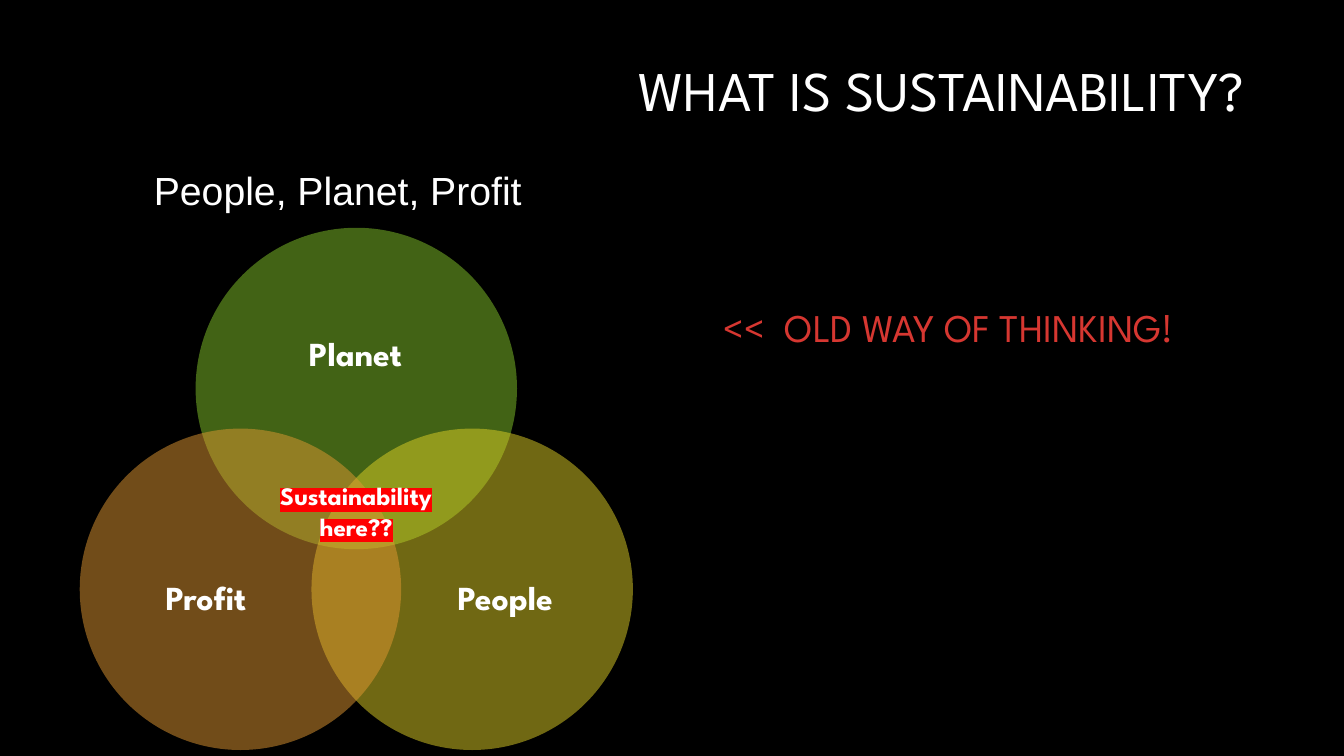
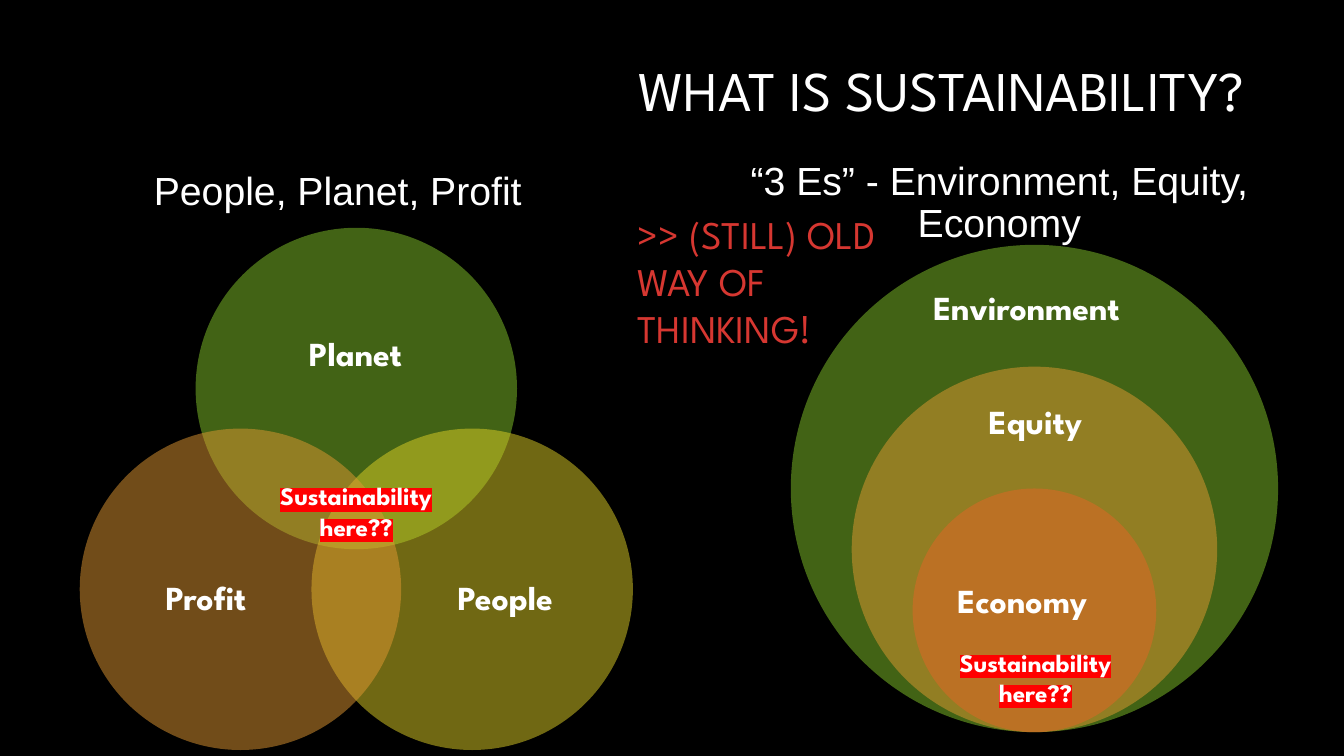
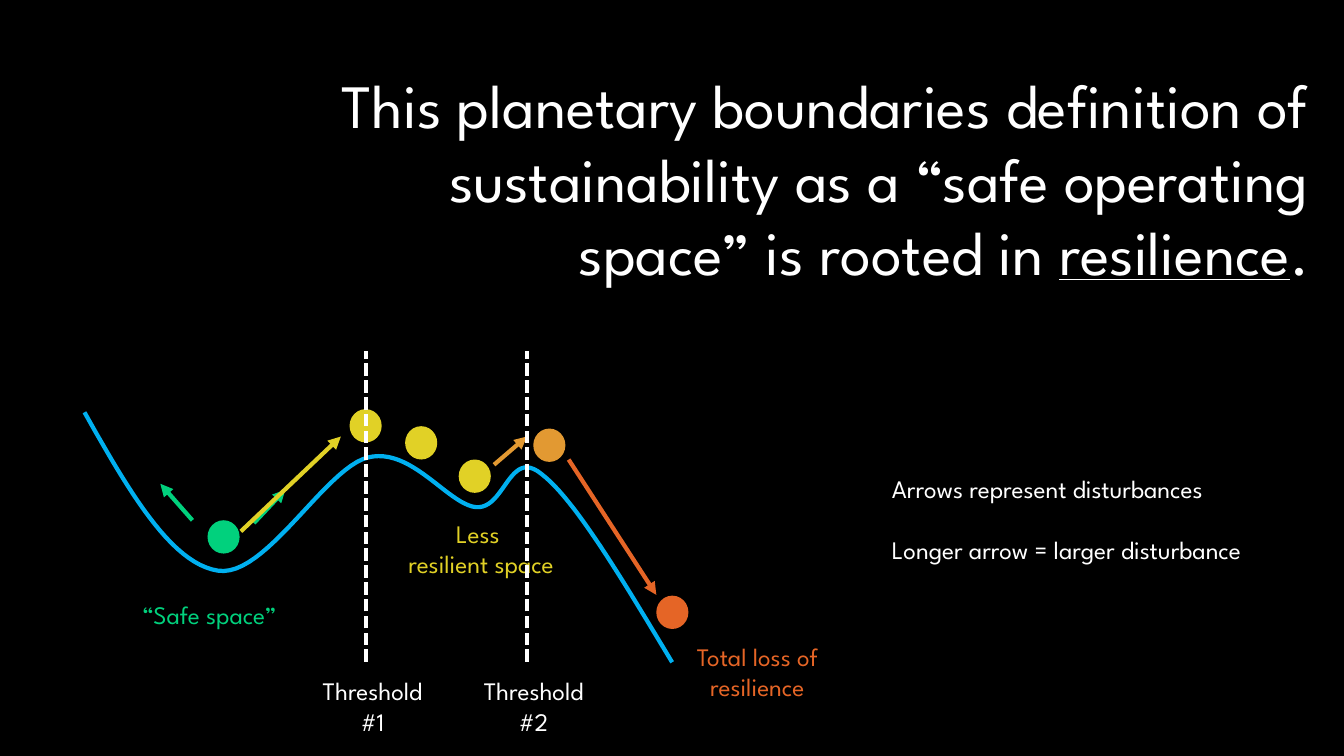
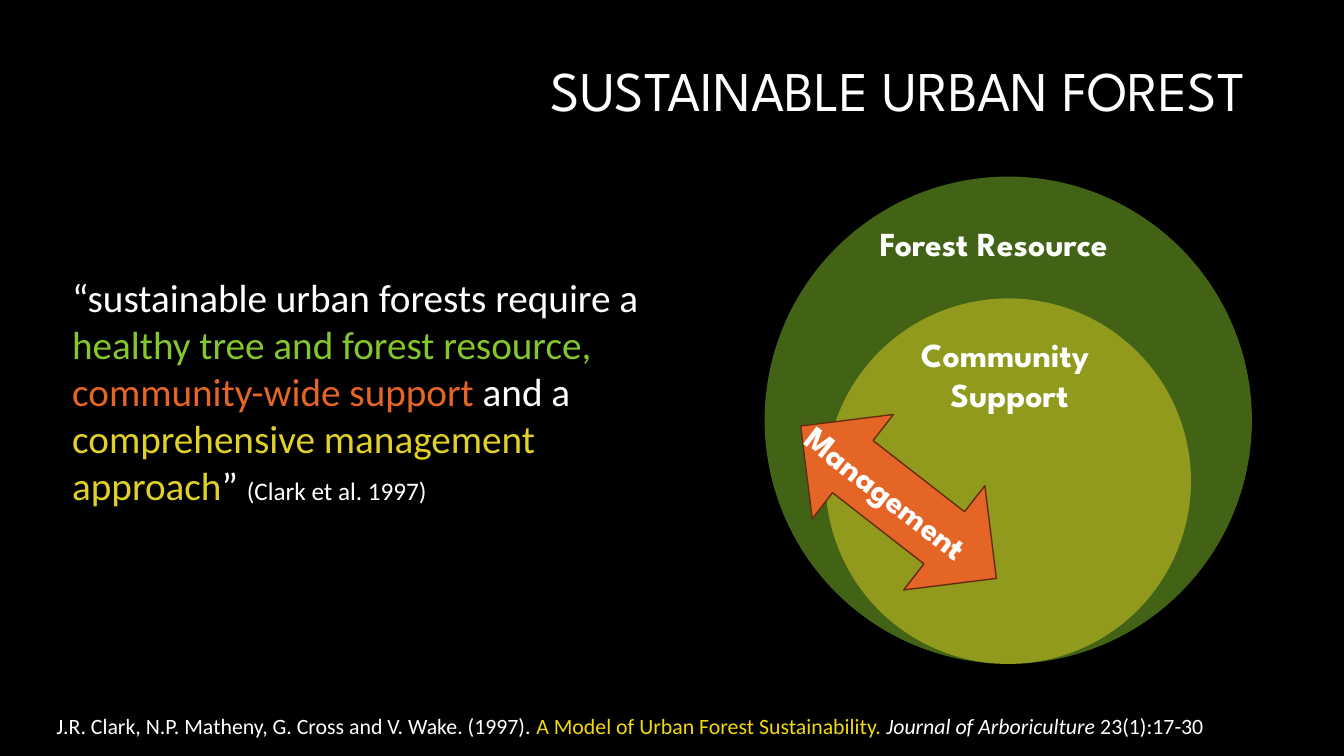
"""Build four dark slides on sustainability, resilience and urban forests."""
from dataclasses import dataclass

from lxml import etree
from pptx import Presentation
from pptx.dml.color import RGBColor
from pptx.enum.dml import MSO_LINE
from pptx.enum.shapes import MSO_CONNECTOR, MSO_SHAPE
from pptx.enum.text import MSO_ANCHOR, MSO_AUTO_SIZE, PP_ALIGN
from pptx.oxml.ns import qn
from pptx.util import Cm, Pt

LEFT, MID, RIGHT = PP_ALIGN.LEFT, PP_ALIGN.CENTER, PP_ALIGN.RIGHT
OVAL, ARROW = MSO_SHAPE.OVAL, MSO_SHAPE.UP_DOWN_ARROW
GROW, FIXED = MSO_AUTO_SIZE.SHAPE_TO_FIT_TEXT, MSO_AUTO_SIZE.NONE
CENTRE = MSO_ANCHOR.MIDDLE
LINE, DASH = MSO_CONNECTOR.STRAIGHT, MSO_LINE.SQUARE_DOT


@dataclass(frozen=True)
class Theme:
    """Colours, fonts and type sizes of the deck."""
    black: str = "000000"
    white: str = "FFFFFF"
    green: str = "84C72A"
    yellow: str = "E1D126"
    amber: str = "E29932"
    orange: str = "E56526"
    rust: str = "642C11"
    red: str = "D63731"
    alert: str = "FF0000"
    mint: str = "01D17D"
    blue: str = "00B0F0"
    gold: str = "F2D908"
    font: str = "League Spartan"
    plain: str = "Arial"
    serif: str = "Calibri"
    huge: int = 44
    title: int = 40
    large: int = 28
    label: int = 24
    small: int = 18
    cite: float = 15.6


T = Theme()
rgb = RGBColor.from_string


def write(box, words, size, ink=T.white, font=T.font, bold=False,
          align=LEFT, wrap=True, centre=False, space=1.0):
    """Fill a box with text, or a list of runs, and return its runs."""
    frame = box.text_frame
    first, *rest = [words] if isinstance(words, str) else words
    frame.text = first
    for part in rest:
        frame.paragraphs[0].add_run().text = part
    frame.word_wrap = wrap
    frame.auto_size = FIXED if centre or box.is_placeholder else GROW
    if centre:
        frame.vertical_anchor = CENTRE
        frame.margin_left = frame.margin_right = 0
        frame.margin_top = frame.margin_bottom = 0
    runs = []
    for para in frame.paragraphs:
        if box.is_placeholder:
            props = para._p.get_or_add_pPr()
            props.set("marL", "0")
            props.set("indent", "0")
            etree.SubElement(props, qn("a:buNone"))
            para.space_before = Pt(0)
        para.alignment = align
        para.line_spacing = space
        runs += para.runs
    for run in runs:
        run.font.size = Pt(size)
        run.font.name = font
        run.font.bold = bold
        run.font.color.rgb = rgb(ink)
    return runs


def disc(shapes, left, top, wide, high, ink, alpha=None):
    """Draw a plain ellipse, see-through if alpha is given."""
    oval = shapes.add_shape(OVAL, Cm(left), Cm(top), Cm(wide), Cm(high))
    oval.shadow.inherit = False
    oval.fill.solid()
    oval.fill.fore_color.rgb = rgb(ink)
    oval.line.fill.background()
    if alpha:
        tint = oval.element.spPr.find(".//" + qn("a:srgbClr"))
        etree.SubElement(tint, qn("a:alpha"), val=str(alpha * 1000))


deck = Presentation()
deck.slide_width, deck.slide_height = Cm(33.87), Cm(19.05)
back = deck.slide_master.background.fill
back.solid()
back.fore_color.rgb = rgb(T.black)

plan = [
    (1, "WHAT IS SUSTAINABILITY?"),
    (1, "WHAT IS SUSTAINABILITY?"),
    (1, None),
    (5, "SUSTAINABLE URBAN FOREST"),
]
slides = []
for layout, head in plan:
    slide = deck.slides.add_slide(deck.slide_layouts[layout])
    title = slide.shapes.title
    if head:
        title.left, title.top = Cm(2.26), Cm(0.76)
        title.width, title.height = Cm(29.36), Cm(3.18)
        write(title, head, T.title, align=RIGHT, space=0.9)
    else:
        title.element.getparent().remove(title.element)
    slides.append(slide)
old, still, space, forest = slides

venn = [
    ("Planet", 4.93, 5.74, T.green, (5.99, 7.14, 5.94, 3.63)),
    ("People", 7.85, 10.8, T.yellow, (10.31, 12.88, 4.85, 4.45)),
    ("Profit", 2.01, 10.8, T.amber, (2.77, 12.88, 4.85, 4.45)),
]
for slide in (old, still):
    body = slide.placeholders[1]
    body.left, body.top = Cm(3.15), Cm(4.19)
    body.width, body.height = Cm(10.72), Cm(1.98)
    write(body, "People, Planet, Profit", T.large, font=T.plain,
          align=MID, space=0.9)
    group = slide.shapes.add_group_shape().shapes
    for name, left, top, ink, place in venn:
        disc(group, left, top, 8.1, 8.1, ink, 50)
        box = group.add_textbox(*map(Cm, place))
        write(box, name, T.label, bold=True, align=MID, centre=True,
              space=0.9)

nests = [
    (still, 26.07, 18.45, (T.green, T.amber, T.orange)),
    (forest, 25.41, 16.73, (T.green, T.yellow)),
]
for slide, mid, base, inks in nests:
    group = slide.shapes.add_group_shape().shapes
    for step, ink in enumerate(inks):
        size = 12.28 * (1 - step / 4)
        disc(group, mid - size / 2, base - size, size, size, ink, 50)

box = old.shapes.add_textbox(Cm(17.98), Cm(7.52), Cm(13.61), Cm(1.45))
write(box, "<<  OLD WAY OF THINKING!", T.large, T.red, wrap=False)

box = still.shapes.add_textbox(Cm(17.07), Cm(3.94), Cm(16.23), Cm(2.24))
write(box, "“3 Es” - Environment, Equity, Economy", T.large,
      font=T.plain, align=MID, space=0.9)
box = still.shapes.add_textbox(Cm(15.82), Cm(5.18), Cm(7.14), Cm(3.84))
write(box, ">> (STILL) OLD WAY OF THINKING!", T.large, T.red)
box = still.shapes.add_textbox(Cm(23.95), Cm(9.8), Cm(4.29), Cm(1.73))
write(box, "Equity", T.label, bold=True, align=MID, centre=True, space=0.9)

for slide, left, top in [(old, 6.45, 11.99), (still, 6.45, 11.99),
                         (still, 23.57, 16.18)]:
    box = slide.shapes.add_textbox(Cm(left), Cm(top), Cm(5.05), Cm(1.8))
    write(box, "Sustainability here??", T.small, bold=True, align=MID)
    for fill in list(box.element.iter(qn("a:solidFill"))):
        mark = etree.Element(qn("a:highlight"))
        etree.SubElement(mark, qn("a:srgbClr"), val=T.alert)
        fill.addnext(mark)

body = space.placeholders[1]
body.left, body.top = Cm(6.4), Cm(1.55)
body.width, body.height = Cm(26.85), Cm(8.97)
runs = write(body, [
    "This planetary boundaries definition of sustainability as a "
    "“safe operating space” is rooted in ", "resilience", "."],
    T.huge, align=RIGHT)
runs[1].font.underline = True

start = (2.13, 10.39)
bends = [
    ((3.2, 12.29), (4.29, 14.2), (5.49, 14.38)),
    ((6.68, 14.58), (8.2, 11.79), (9.27, 11.53)),
    ((10.36, 11.25), (11.28, 12.7), (11.99, 12.78)),
    ((12.73, 12.85), (12.83, 11.28), (13.64, 11.94)),
    ((14.48, 12.57), (15.7, 14.63), (16.94, 16.69)),
]
steps = 24
pen = space.shapes.build_freeform(*map(Cm, start))
dots = []
for one, two, end in bends:
    for step in range(1, steps + 1):
        t = step / steps
        u = 1 - t
        dots.append([
            Cm(u**3 * a + 3 * u * u * t * b + 3 * u * t * t * c + t**3 * d)
            for a, b, c, d in zip(start, one, two, end)])
    start = end
pen.add_line_segments(dots, close=False)
curve = pen.convert_to_shape()
curve.shadow.inherit = False
curve.fill.background()
curve.line.color.rgb = rgb(T.blue)
curve.line.width = Pt(3)

balls = [
    (5.23, 13.11, T.mint), (8.81, 10.31, T.yellow), (11.56, 11.58, T.yellow),
    (10.21, 10.74, T.yellow), (13.44, 10.8, T.amber), (16.54, 15.01, T.orange),
]
for left, top, ink in balls:
    disc(space.shapes, left, top, 0.81, 0.84, ink)

notes = [
    ("“Safe space”", (3.33, 14.99, 4.65, 1.02), T.mint, LEFT, False),
    ("Less \nresilient space", (9.8, 12.93, 4.65, 2.57), T.yellow, MID, True),
    ("Total loss of resilience", (16.76, 16.03, 4.65, 1.8), T.orange, MID,
     True),
    ("Arrows represent disturbances\nLonger arrow = larger disturbance",
     (22.23, 11.81, 11.05, 2.57), T.white, LEFT, False),
]
lines = [
    (6.4, 13.18, 7.19, 12.34, T.mint), (4.85, 13.11, 4.04, 12.19, T.mint),
    (6.07, 13.39, 8.59, 11, T.yellow), (12.45, 11.71, 13.28, 11, T.amber),
    (14.33, 11.58, 16.54, 14.99, T.orange),
]
for count, mid in enumerate((9.22, 13.28), 1):
    lines.append((mid, 16.68, mid, 8.84, T.white))
    notes.append((f"Threshold\n#{count}", (mid - 1.53, 16.9, 3.4, 1.8),
                  T.white, MID, False))
for words, place, ink, align, wrap in notes:
    box = space.shapes.add_textbox(*map(Cm, place))
    write(box, words, T.small, ink, align=align, wrap=wrap)
    if words.startswith("Arrows"):
        box.text_frame.paragraphs[1].space_before = Pt(21.5)
for *ends, ink in lines:
    line = space.shapes.add_connector(LINE, *map(Cm, ends))
    line.line.color.rgb = rgb(ink)
    line.line.width = Pt(3)
    props = line.element.spPr
    if ink == T.white:
        line.line.dash_style = DASH
    else:
        etree.SubElement(props.find(qn("a:ln")), qn("a:tailEnd"),
                         type="triangle")
    etree.SubElement(props, qn("a:effectLst"))

arrow = forest.shapes.add_shape(ARROW, Cm(20.98), Cm(9.53), Cm(3.33), Cm(6.25))
arrow.rotation = 307.9
arrow.shadow.inherit = False
arrow.fill.solid()
arrow.fill.fore_color.rgb = rgb(T.orange)
arrow.line.color.rgb = rgb(T.rust)
arrow.line.width = Pt(1)

names = [
    (still, "Environment", (23.27, 7.11, 5.64, 1.27), LEFT, 0),
    (still, "Economy", (23.88, 14.48, 4.42, 1.27), LEFT, 0),
    (forest, "Management", (19.58, 12.01, 6.15, 1.27), LEFT, 37.7),
    (forest, "Forest Resource", (21.92, 5.49, 7.01, 1.27), LEFT, 0),
    (forest, "Community \nSupport", (22.66, 8.28, 5.56, 2.31), MID, 0),
]
for slide, words, place, align, turn in names:
    box = slide.shapes.add_textbox(*map(Cm, place))
    box.rotation = turn
    write(box, words, T.label, bold=True, align=align, wrap=False)

box = forest.shapes.add_textbox(Cm(1.57), Cm(6.76), Cm(15.06), Cm(6.25))
quote = write(box, [
    "“sustainable urban forests require a ",
    "healthy tree and forest resource, ", "community-wide support", " and a ",
    "comprehensive management approach", "” ", "(Clark et al. 1997)"],
    T.large, font=T.serif)
for spot, ink in ((1, T.green), (2, T.orange), (4, T.yellow)):
    quote[spot].font.color.rgb = rgb(ink)
quote[-1].font.size = Pt(T.small)

box = forest.shapes.add_textbox(Cm(1.42), Cm(17.68), Cm(31), Cm(1.2))
cite = write(box, [
    "J.R. Clark, N.P. Matheny, G. Cross and V. Wake. (1997). ",
    "A Model of Urban Forest Sustainability. ", "Journal of Arboriculture",
    " 23(1):17-30"], T.cite, font=T.serif, centre=True)
cite[1].font.color.rgb = rgb(T.gold)
cite[2].font.italic = True

deck.save("out.pptx")
